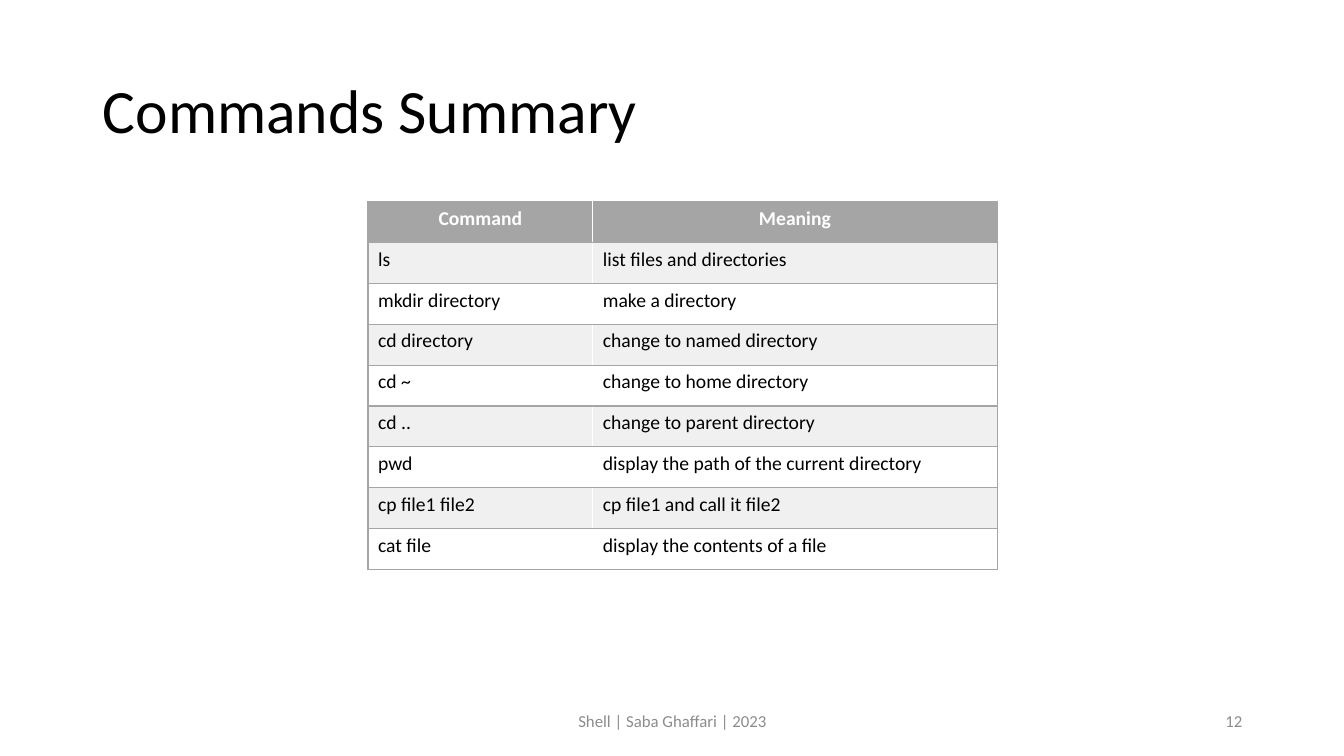
from lxml.etree import SubElement
from pptx import Presentation
from pptx.dml.color import RGBColor
from pptx.enum.text import MSO_ANCHOR, MSO_AUTO_SIZE, PP_ALIGN
from pptx.oxml.ns import qn
from pptx.util import Inches, Pt

BLACK = RGBColor(0, 0, 0)
WHITE = RGBColor(255, 255, 255)
GRAY = RGBColor(0xA5, 0xA5, 0xA5)
BAND = RGBColor(0xF0, 0xF0, 0xF0)
MUTED = RGBColor(0x8C, 0x8C, 0x8C)

ROWS = [
    ("Command", "Meaning"),
    ("ls", "list files and directories"),
    ("mkdir directory", "make a directory"),
    ("cd directory", "change to named directory"),
    ("cd ~", "change to home directory"),
    ("cd ..", "change to parent directory"),
    ("pwd", "display the path of the current directory"),
    ("cp file1 file2", "cp file1 and call it file2"),
    ("cat file", "display the contents of a file"),
]


class Deck:
    font = "Calibri"

    def __init__(self):
        self.prs = Presentation()
        self.prs.slide_width = Inches(13.33)
        self.prs.slide_height = Inches(7.5)
        self.slide = self.prs.slides.add_slide(self.prs.slide_layouts[5])

    def style(self, frame, text, size, color, align=PP_ALIGN.LEFT, bold=False):
        frame.text = text
        para = frame.paragraphs[0]
        para.alignment = align
        para.font.name = self.font
        para.font.size = Pt(size)
        para.font.bold = bold
        para.font.color.rgb = color
        return para

    def title(self, text, left, top, width, height):
        box = self.slide.shapes.title
        box.left, box.top = Inches(left), Inches(top)
        box.width, box.height = Inches(width), Inches(height)
        frame = box.text_frame
        frame.auto_size = MSO_AUTO_SIZE.NONE
        frame.vertical_anchor = MSO_ANCHOR.MIDDLE
        self.style(frame, text, 44, BLACK).line_spacing = 0.9

    def label(self, text, left, top, width, height, align):
        box = self.slide.shapes.add_textbox(
            Inches(left), Inches(top), Inches(width), Inches(height))
        frame = box.text_frame
        frame.word_wrap = True
        frame.vertical_anchor = MSO_ANCHOR.MIDDLE
        self.style(frame, text, 12, MUTED, align)

    def border(self, cell, sides):
        props = cell._tc.get_or_add_tcPr()
        for side in sides:
            line = SubElement(props, qn("a:ln" + side), w=str(Pt(1)))
            fill = SubElement(line, qn("a:solidFill"))
            SubElement(fill, qn("a:srgbClr"), val=str(GRAY))

    def table(self, rows, left, top, widths, height):
        table = self.slide.shapes.add_table(
            len(rows), len(widths), Inches(left), Inches(top),
            Inches(sum(widths)), Inches(height)).table
        for col, width in zip(table.columns, widths):
            col.width = Inches(width)
        for r, row in enumerate(rows):
            for c, text in enumerate(row):
                cell = table.cell(r, c)
                self.border(cell, "RTB" if c else "LTB")
                cell.fill.solid()
                if r == 0:
                    cell.fill.fore_color.rgb = GRAY
                    self.style(cell.text_frame, text, 14, WHITE,
                               PP_ALIGN.CENTER, True)
                else:
                    cell.fill.fore_color.rgb = BAND if r % 2 else WHITE
                    self.style(cell.text_frame, text, 14, BLACK)


def main():
    deck = Deck()
    deck.title("Commands Summary", 0.92, 0.4, 11.5, 1.45)
    deck.table(ROWS, 3.65, 2, [2.23, 4.01], 3.65)
    deck.label("Shell | Saba Ghaffari | 2023", 4.42, 6.95, 4.5, 0.4,
               PP_ALIGN.CENTER)
    deck.label("12", 9.42, 6.95, 3, 0.4, PP_ALIGN.RIGHT)
    deck.prs.save("out.pptx")


if __name__ == "__main__":
    main()
